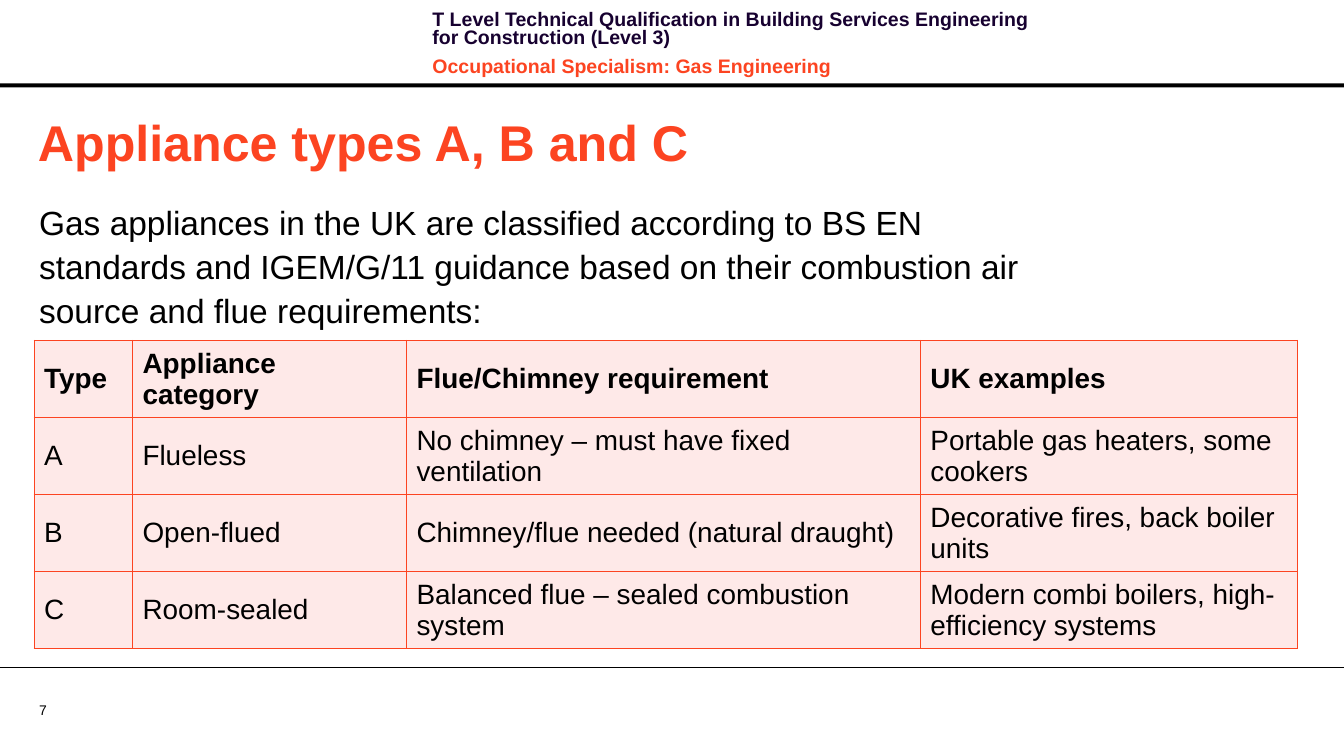
from lxml import etree
from pptx import Presentation
from pptx.dml.color import RGBColor
from pptx.enum.shapes import MSO_CONNECTOR, MSO_SHAPE
from pptx.enum.text import MSO_ANCHOR
from pptx.oxml.ns import qn
from pptx.util import Inches, Pt

RECTANGLE = MSO_SHAPE.RECTANGLE
STRAIGHT = MSO_CONNECTOR.STRAIGHT
TOP, MIDDLE = MSO_ANCHOR.TOP, MSO_ANCHOR.MIDDLE

FONT = "Arial"
BLACK, NAVY, ORANGE, PINK = "000000", "170130", "FC4421", "FEE9E8"
SLIDE_WIDTH, SLIDE_HEIGHT = 13.39, 7.48

HEADER = [
    ("T Level Technical Qualification in Building Services Engineering "
     "for Construction (Level 3)", NAVY),
    ("Occupational Specialism: Gas Engineering", ORANGE),
]
TITLE = "Appliance types A, B and C"
INTRO = ("Gas appliances in the UK are classified according to BS EN standards and "
         "IGEM/G/11 guidance based on their combustion air source and flue requirements:")
SLIDE_NUMBER = "7"
APPLIANCES = [
    ("Type", "Appliance category", "Flue/Chimney requirement", "UK examples"),
    ("A", "Flueless", "No chimney – must have fixed ventilation",
     "Portable gas heaters, some cookers"),
    ("B", "Open-flued", "Chimney/flue needed (natural draught)",
     "Decorative fires, back boiler units"),
    ("C", "Room-sealed", "Balanced flue – sealed combustion system",
     "Modern combi boilers, high-efficiency systems"),
]
COLUMN_WIDTHS = [0.98, 2.73, 5.12, 3.76]
ROW_HEIGHT = 0.72


def rgb(hex_color):
    return RGBColor.from_string(hex_color)


def write(paragraph, text, size, color=BLACK, bold=False, line_spacing=None,
          before=0, after=0):
    paragraph.space_before, paragraph.space_after = Pt(before), Pt(after)
    if line_spacing:
        paragraph.line_spacing = line_spacing
    run = paragraph.add_run()
    run.text = text
    run.font.name, run.font.size, run.font.bold = FONT, Pt(size), bold
    run.font.color.rgb = rgb(color)


def add_frame(slide, left, top, width, height, inset=True, anchor=TOP):
    """Add a wrapping text box and return its text frame."""
    box = slide.shapes.add_textbox(*map(Inches, (left, top, width, height)))
    frame = box.text_frame
    frame.word_wrap = True
    frame.vertical_anchor = anchor
    if not inset:
        frame.margin_left = frame.margin_right = 0
        frame.margin_top = frame.margin_bottom = 0
    return frame


def add_rules(slide):
    """Add the thick bar under the header and the thin line above the footer."""
    bar = slide.shapes.add_shape(
        RECTANGLE, 0, Inches(0.83), Inches(SLIDE_WIDTH), Inches(0.04))
    bar.shadow.inherit = False
    bar.fill.solid()
    bar.fill.fore_color.rgb = rgb(BLACK)
    bar.line.fill.background()
    line = slide.shapes.add_connector(
        STRAIGHT, 0, Inches(6.65), Inches(SLIDE_WIDTH), Inches(6.65))
    line.line.color.rgb = rgb(BLACK)
    line.line.width = Pt(0.75)
    etree.SubElement(line._element.spPr, qn("a:effectLst"))


def style_cell(cell):
    """Give a cell its borders, which must precede the fill, and its fill."""
    properties = cell._tc.get_or_add_tcPr()
    for side in ("lnL", "lnR", "lnT", "lnB"):
        border = etree.SubElement(properties, qn(f"a:{side}"), w=str(Pt(1)))
        fill = etree.SubElement(border, qn("a:solidFill"))
        etree.SubElement(fill, qn("a:srgbClr"), val=ORANGE)
    cell.fill.solid()
    cell.fill.fore_color.rgb = rgb(PINK)
    cell.vertical_anchor = MIDDLE


def add_appliance_table(slide):
    row_count = len(APPLIANCES)
    table = slide.shapes.add_table(
        row_count, len(COLUMN_WIDTHS), Inches(0.34), Inches(3.39),
        Inches(sum(COLUMN_WIDTHS)), Inches(ROW_HEIGHT * row_count)).table
    for column, width in zip(table.columns, COLUMN_WIDTHS):
        column.width = Inches(width)
    for row_index, texts in enumerate(APPLIANCES):
        table.rows[row_index].height = Inches(ROW_HEIGHT)
        for column_index, text in enumerate(texts):
            cell = table.cell(row_index, column_index)
            style_cell(cell)
            write(cell.text_frame.paragraphs[0], text, 20, bold=row_index == 0)


def main():
    presentation = Presentation()
    presentation.slide_width = Inches(SLIDE_WIDTH)
    presentation.slide_height = Inches(SLIDE_HEIGHT)
    slide = presentation.slides.add_slide(presentation.slide_layouts[6])

    add_rules(slide)
    header = add_frame(slide, 4.21, 0.07, 6.37, 0.64)
    for index, (text, color) in enumerate(HEADER):
        paragraph = header.add_paragraph() if index else header.paragraphs[0]
        write(paragraph, text, 14, color, bold=True, line_spacing=Pt(13.1),
              before=4 if index else 0, after=4)

    title = add_frame(slide, 0.28, 1.05, 12.72, 0.71, anchor=MIDDLE)
    write(title.paragraphs[0], TITLE, 36, ORANGE, bold=True)
    intro = add_frame(slide, 0.39, 1.97, 10.24, 1.4, inset=False)
    write(intro.paragraphs[0], INTRO, 24, line_spacing=1.1, after=12)
    add_appliance_table(slide)
    number = add_frame(slide, 0.39, 6.99, 0.64, 0.17, inset=False, anchor=MIDDLE)
    write(number.paragraphs[0], SLIDE_NUMBER, 10)

    presentation.save("out.pptx")


if __name__ == "__main__":
    main()
